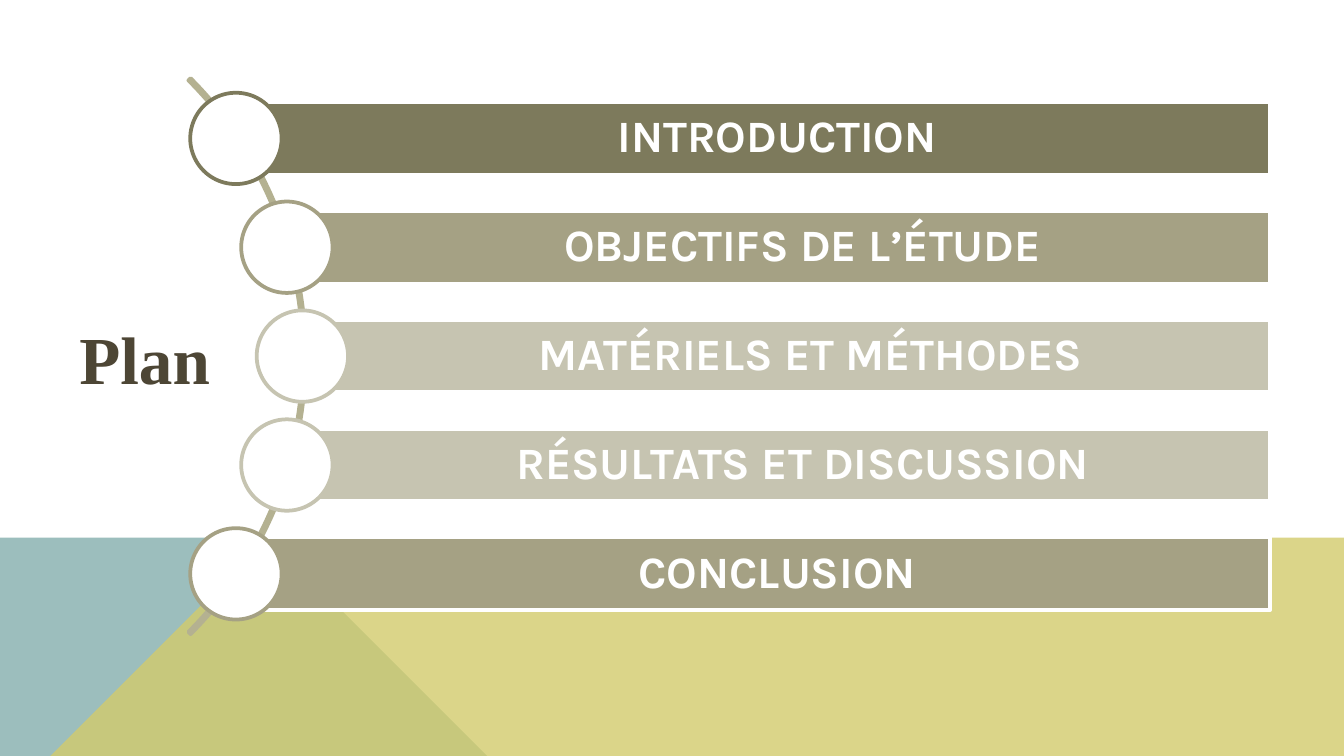
import math

import lxml.etree
import pptx
import pptx.dml.color
import pptx.enum.shapes
import pptx.enum.text
import pptx.oxml.ns
import pptx.util

RGBColor = pptx.dml.color.RGBColor
SHAPE = pptx.enum.shapes.MSO_SHAPE
ALIGN = pptx.enum.text.PP_ALIGN
ANCHOR = pptx.enum.text.MSO_ANCHOR
Inches = pptx.util.Inches
Pt = pptx.util.Pt

WHITE = RGBColor(0xFF, 0xFF, 0xFF)
TEAL = RGBColor(0x9C, 0xBE, 0xBD)
YELLOW = RGBColor(0xD2, 0xCB, 0x6C)
ARC_LINE = RGBColor(0xB4, 0xB1, 0x91)
TITLE_BROWN = RGBColor(0x4D, 0x46, 0x35)
DARK = RGBColor(0x7D, 0x7A, 0x5C)
MEDIUM = RGBColor(0xA5, 0xA1, 0x84)
LIGHT = RGBColor(0xC6, 0xC4, 0xB1)

STEPS = [
    ("INTRODUCTION", DARK),
    ("OBJECTIFS DE L’ÉTUDE", MEDIUM),
    ("MATÉRIELS ET MÉTHODES", LIGHT),
    ("RÉSULTATS ET DISCUSSION", LIGHT),
    ("CONCLUSION", MEDIUM),
]

deck = pptx.Presentation()
deck.slide_width = Inches(10)
deck.slide_height = deck.slide_width * 9 // 16
WIDTH = deck.slide_width / Inches(1)
HEIGHT = deck.slide_height / Inches(1)
page = deck.slides.add_slide(deck.slide_layouts[5])


def add_band(corners, color):
    builder = page.shapes.build_freeform(*corners[0], scale=Inches(1))
    builder.add_line_segments(corners[1:], close=True)
    band = builder.convert_to_shape()
    band.shadow.inherit = False
    band.fill.solid()
    band.fill.fore_color.rgb = color
    band.line.fill.background()
    return band


def add_outlined(kind, left, top, width, height, fill, line):
    shape = page.shapes.add_shape(
        kind, Inches(left), Inches(top), Inches(width), Inches(height))
    shape.shadow.inherit = False
    if fill is None:
        shape.fill.background()
    else:
        shape.fill.solid()
        shape.fill.fore_color.rgb = fill
    shape.line.color.rgb = line
    shape.line.width = Pt(2)
    return shape


# Landscape along the foot of the slide
horizon = 4.14
ridge = 2.23
add_band([(0, HEIGHT), (0, horizon), (ridge, horizon), (3.91, HEIGHT)], TEAL)
field = add_band(
    [(0, HEIGHT), (ridge, horizon), (WIDTH, horizon), (WIDTH, HEIGHT)], YELLOW)
field_color = field.fill._xPr.find(".//" + pptx.oxml.ns.qn("a:srgbClr"))
lxml.etree.SubElement(field_color, pptx.oxml.ns.qn("a:alpha"), val="80000")

# Arc that carries the steps
arc_x, arc_y = -0.65, 2.65
arc_size = 5.85
arc = add_outlined(SHAPE.BLOCK_ARC, arc_x - arc_size / 2, arc_y - arc_size / 2,
                   arc_size, arc_size, None, ARC_LINE)
for index, value in enumerate((189, 27, 0.004)):
    arc.adjustments[index] = value

# One bar and one circle per step, centred on the arc
row_pitch = 0.81
orbit = 2.9
bar_right = 9.45
bar_height = 0.54
circle_size = 0.68
for row, (label, color) in enumerate(STEPS):
    offset = (row - (len(STEPS) - 1) / 2) * row_pitch
    x = arc_x + math.sqrt(orbit ** 2 - offset ** 2)
    y = arc_y + offset
    bar = add_outlined(SHAPE.RECTANGLE, x, y - bar_height / 2,
                       bar_right - x, bar_height, color, WHITE)
    frame = bar.text_frame
    frame.word_wrap = True
    frame.vertical_anchor = ANCHOR.MIDDLE
    frame.margin_left = Inches(0.43)
    frame.margin_top = frame.margin_right = frame.margin_bottom = Inches(0.07)
    para = frame.paragraphs[0]
    para.text = label
    para.alignment = ALIGN.CENTER
    para.line_spacing = 0.9
    para.font.name = "Karla"
    para.font.size = Pt(24)
    para.font.bold = True
    para.font.color.rgb = WHITE
    add_outlined(SHAPE.OVAL, x - circle_size / 2, y - circle_size / 2,
                 circle_size, circle_size, WHITE, color)

title = page.shapes.title
title.left, title.top = Inches(0.49), Inches(2.31)
title.width, title.height = Inches(1.18), Inches(0.71)
frame = title.text_frame
frame.word_wrap = False
frame.auto_size = pptx.enum.text.MSO_AUTO_SIZE.SHAPE_TO_FIT_TEXT
frame.vertical_anchor = ANCHOR.TOP
para = frame.paragraphs[0]
para.text = "Plan"
para.alignment = ALIGN.LEFT
para.font.name = "Times New Roman"
para.font.size = Pt(36)
para.font.bold = True
para.font.color.rgb = TITLE_BROWN

deck.save("out.pptx")
